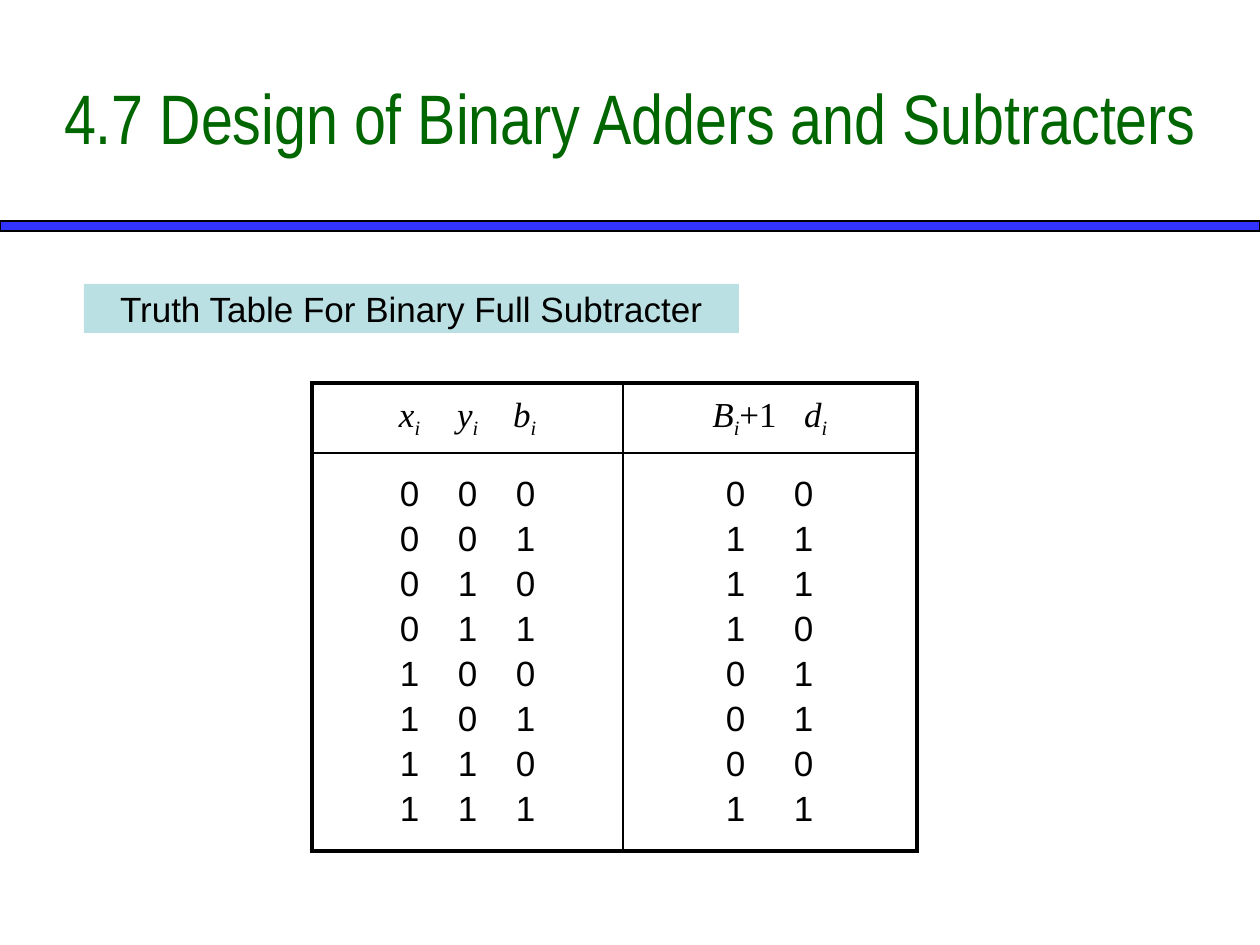
from lxml.etree import SubElement
from pptx import Presentation
from pptx.dml.color import RGBColor
from pptx.enum.shapes import MSO_SHAPE as Preset
from pptx.enum.text import MSO_ANCHOR as Anchor, PP_ALIGN as Align
from pptx.oxml.ns import qn
from pptx.util import Pt

EMU_PER_PX = 914400 / 126
BLACK = "000000"
THICK, THIN = 2.25, 1

INPUTS = ["000", "001", "010", "011", "100", "101", "110", "111"]
OUTPUTS = ["00", "11", "11", "10", "01", "01", "00", "11"]
INPUT_NAMES = [("\tx", True), ("i", "sub"), ("\ty", True), ("i", "sub"),
               ("\tb", True), ("i", "sub")]
OUTPUT_NAMES = [("\tB", True), ("i", "sub"), ("+1", False),
                ("\td", True), ("i", "sub")]


def px(length):
    return round(length * EMU_PER_PX)


def box_px(box):
    return [px(length) for length in box]


def colour(value):
    return RGBColor.from_string(value)


def add_run(paragraph, text, size, font, ink=BLACK, style=False):
    run = paragraph.add_run()
    run.text = text
    run.font.size = Pt(size)
    run.font.name = font
    run.font.color.rgb = colour(ink)
    run.font.italic = bool(style)
    if style == "sub":
        run.font._element.set("baseline", "-25000")


def set_centre_tabs(paragraph, stops):
    tabs = SubElement(paragraph._p.get_or_add_pPr(), qn("a:tabLst"))
    for stop in stops:
        SubElement(tabs, qn("a:tab"), pos=str(px(stop)), algn="ctr")


def set_borders(cell, **widths):
    properties = cell._tc.get_or_add_tcPr()
    for side in "LRTB":
        line = SubElement(properties, qn(f"a:ln{side}"), w=str(Pt(widths[side])))
        SubElement(SubElement(line, qn("a:solidFill")), qn("a:srgbClr"), val=BLACK)


def write_centred(frame, text, size, font, ink):
    frame.word_wrap = True
    frame.vertical_anchor = Anchor.MIDDLE
    paragraph = frame.paragraphs[0]
    paragraph.alignment = Align.CENTER
    add_run(paragraph, text, size, font, ink)


def add_bar(slide, box, fill, outline=None):
    bar = slide.shapes.add_shape(Preset.RECTANGLE, *box_px(box))
    bar.shadow.inherit = False
    bar.fill.solid()
    bar.fill.fore_color.rgb = colour(fill)
    if outline:
        bar.line.color.rgb = colour(outline)
        bar.line.width = Pt(0.75)
    else:
        bar.line.fill.background()
    return bar


def add_heading(slide, box):
    left, top, width, height = box
    add_bar(slide, (left, top + 183, width, 10), "3333FF", BLACK)
    title = slide.shapes.add_textbox(*box_px((left, top, width, height)))
    write_centred(title.text_frame, "4.7 Design of Binary Adders and Subtracters",
                  40, "Arial Narrow", "006600")


def add_caption(slide, box):
    caption = add_bar(slide, box, "BBE0E3")
    write_centred(caption.text_frame, "Truth Table For Binary Full Subtracter",
                  20, "Arial", BLACK)


def fill_cell(cell, lines, font, stops):
    cell.vertical_anchor = Anchor.MIDDLE
    for number, line in enumerate(lines):
        frame = cell.text_frame
        paragraph = frame.add_paragraph() if number else frame.paragraphs[0]
        paragraph.alignment = Align.LEFT
        paragraph.space_before = Pt(3.4)
        set_centre_tabs(paragraph, stops)
        for text, style in line:
            add_run(paragraph, text, 20, font, style=style)


def digit_lines(rows):
    return [[("".join(f"\t{digit}" for digit in row), False)] for row in rows]


def add_truth_table(slide, box):
    left, top, width, height = box
    header_height, input_width = 70, 311
    table = slide.shapes.add_table(2, 2, *box_px(box)).table
    table.first_row = table.horz_banding = False
    for column, size in zip(table.columns, (input_width, width - input_width)):
        column.width = px(size)
    for row, size in zip(table.rows, (header_height, height - header_height)):
        row.height = px(size)

    contents = [
        [([INPUT_NAMES], "Times New Roman", (85, 143, 200)),
         ([OUTPUT_NAMES], "Times New Roman", (109, 180))],
        [(digit_lines(INPUTS), "Arial", (85, 143, 201)),
         (digit_lines(OUTPUTS), "Arial", (100, 168))],
    ]
    for r, row in enumerate(contents):
        for c, (lines, font, stops) in enumerate(row):
            cell = table.cell(r, c)
            fill_cell(cell, lines, font, stops)
            set_borders(cell, L=THIN if c else THICK, R=THICK if c else THIN,
                        T=THIN if r else THICK, B=THICK if r else THIN)
            cell.fill.background()


def main():
    deck = Presentation()
    deck.slide_width, deck.slide_height = px(1260), px(945)
    slide = deck.slides.add_slide(deck.slide_layouts[6])
    add_heading(slide, (0, 38, 1260, 158))
    add_caption(slide, (84, 284, 655, 49))
    add_truth_table(slide, (312, 383, 605, 468))
    deck.save("out.pptx")


if __name__ == "__main__":
    main()
